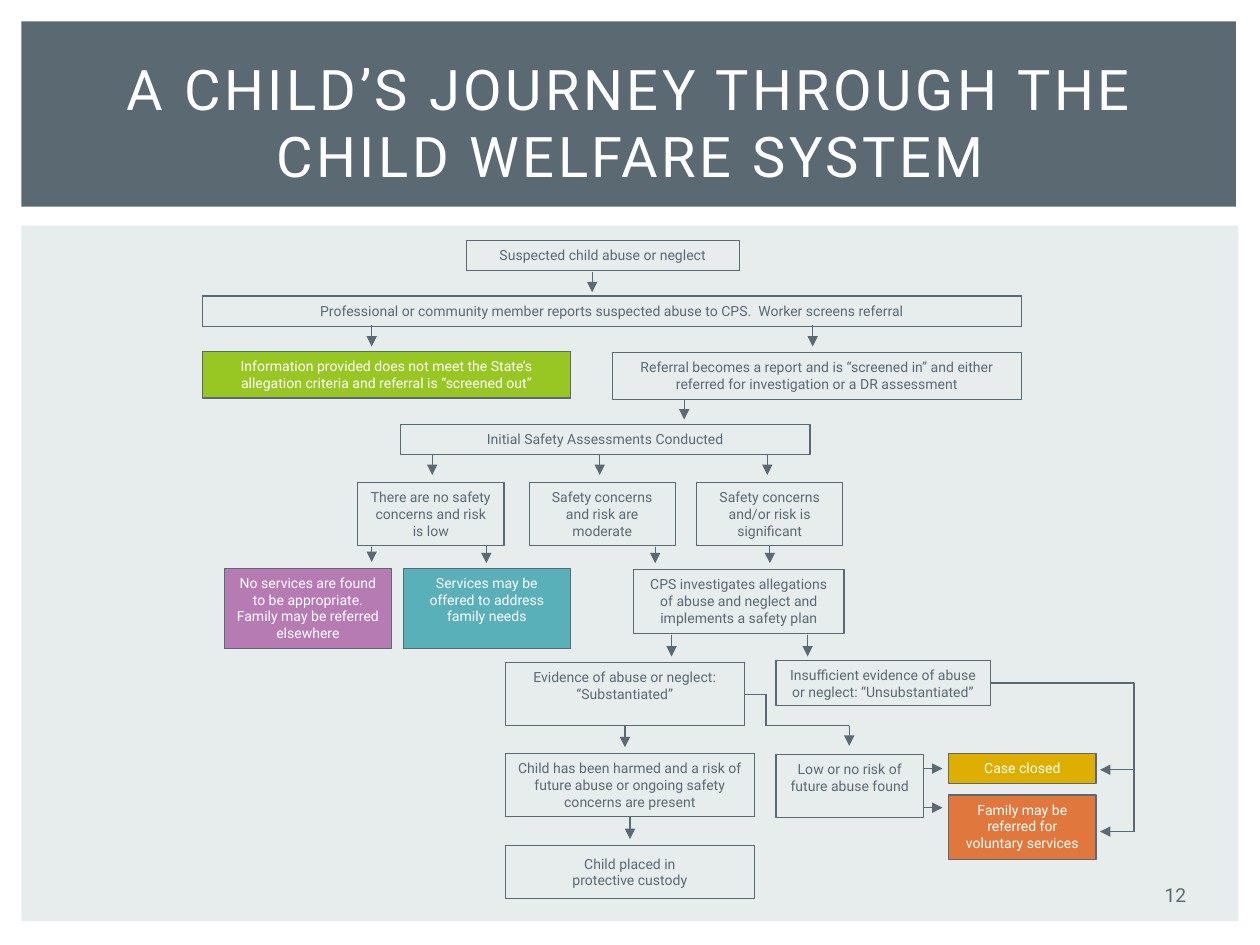
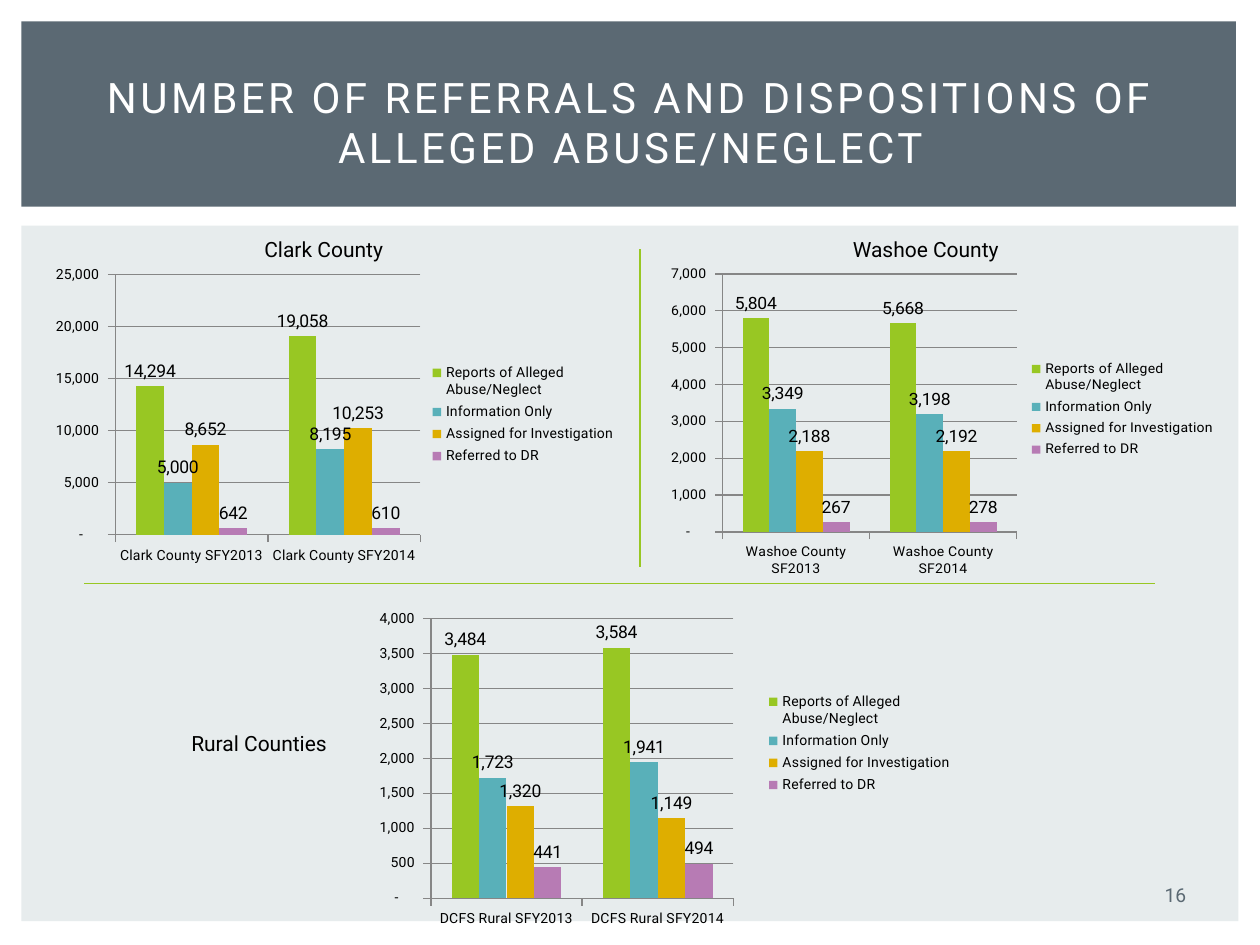
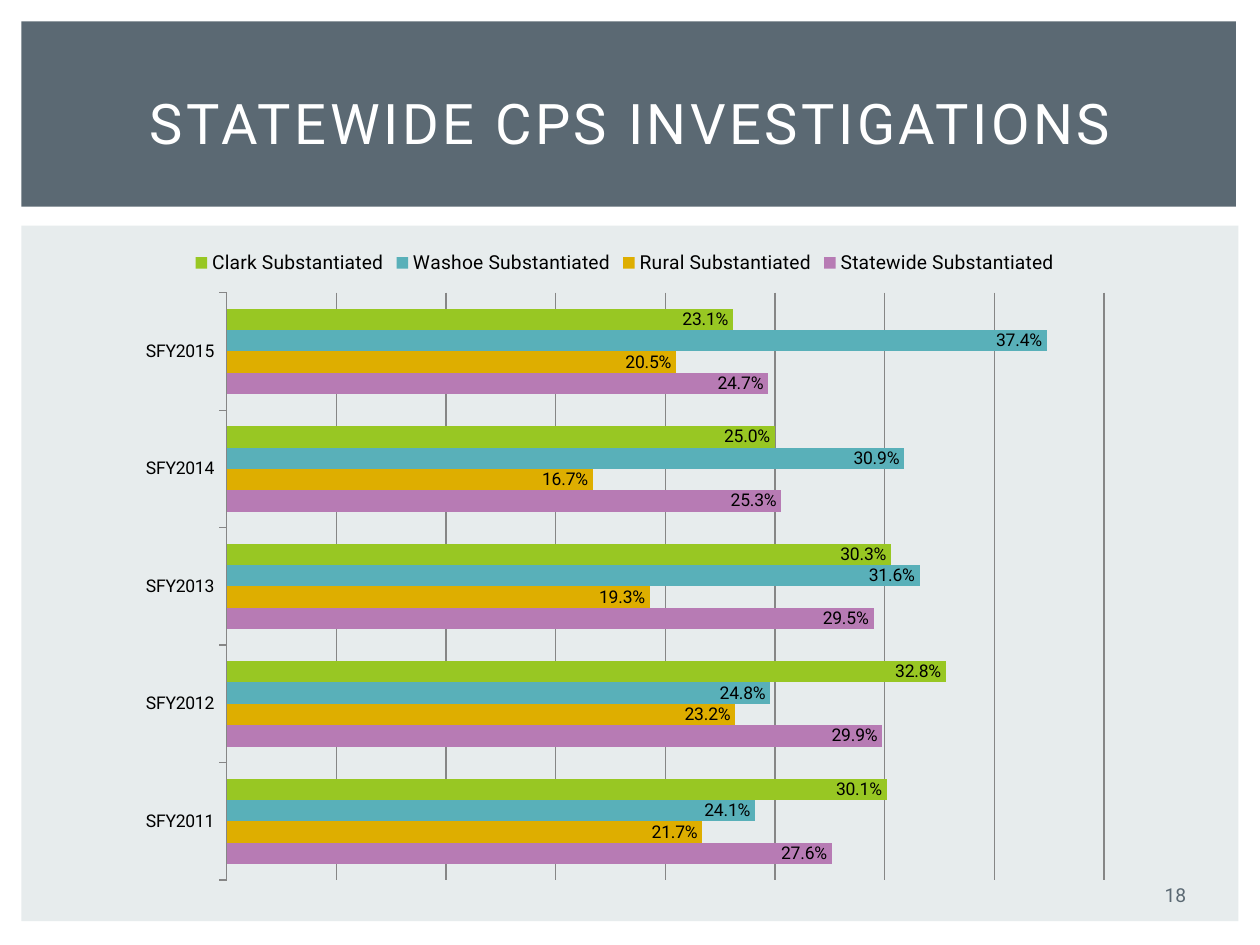
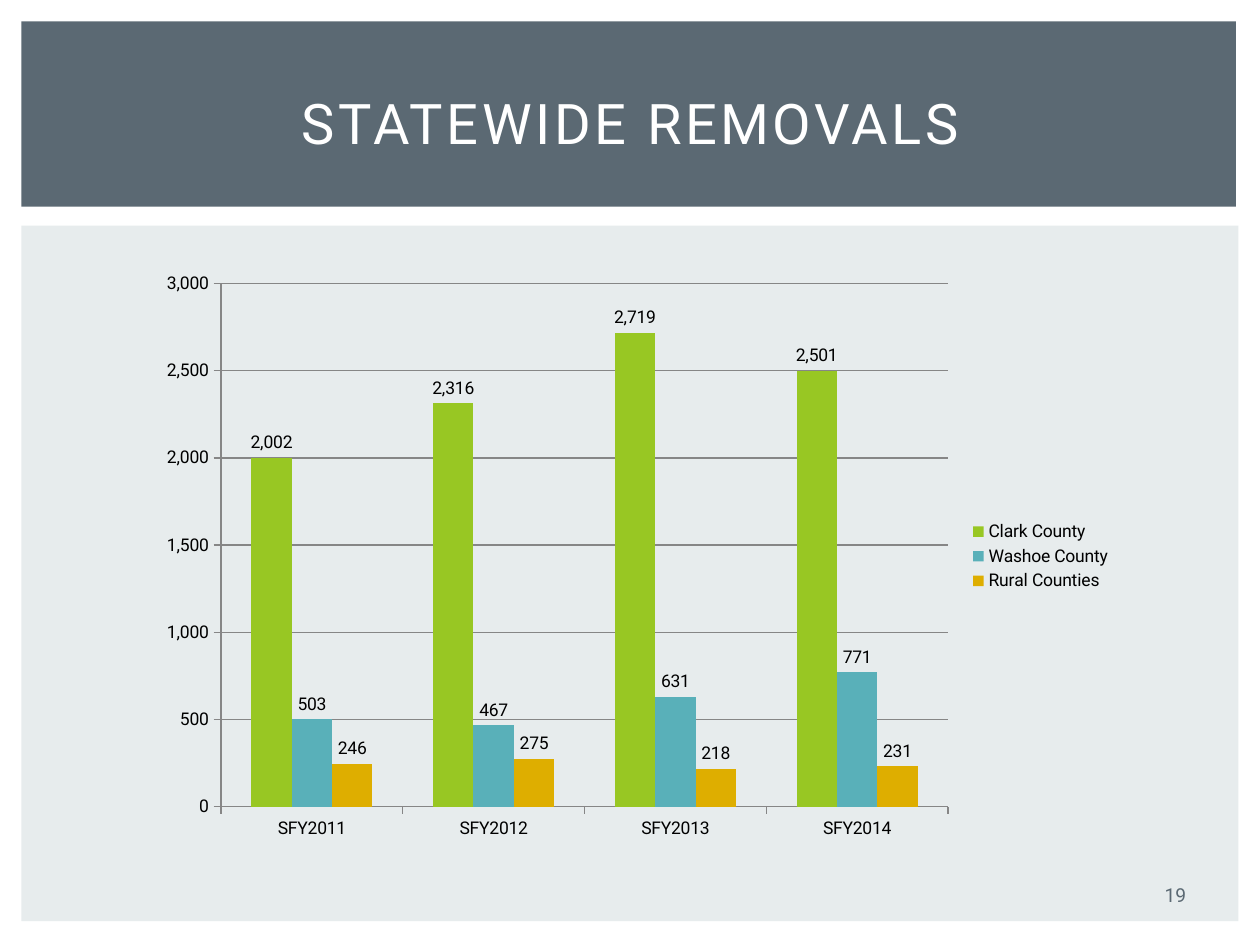
"""Build four slides on child welfare referrals, investigations and removals."""
from lxml.etree import SubElement as Sub
from pptx import Presentation
from pptx.chart.data import CategoryChartData as Data
from pptx.dml.color import RGBColor
from pptx.enum.chart import XL_CHART_TYPE as Kind
from pptx.enum.chart import XL_LABEL_POSITION as Spot
from pptx.enum.chart import XL_LEGEND_POSITION as Side
from pptx.enum.chart import XL_TICK_MARK as Tick
from pptx.enum.shapes import MSO_CONNECTOR as Link
from pptx.enum.shapes import MSO_SHAPE as Form
from pptx.enum.text import MSO_ANCHOR as Anchor
from pptx.enum.text import PP_ALIGN as Align
from pptx.oxml.ns import qn
from pptx.util import Emu, Pt

SCALE = 9144
FONT = "Roboto"
SLATE, PALE, WHITE, BLACK, GRAY = "5B6973", "E7ECED", "FFFFFF", "000000", "868686"
GREEN, TEAL, GOLD, PLUM, RUST = "98C723", "59B0B9", "DEAE00", "B77BB4", "E0773C"
COMMA = '_(* #,##0_);_(* \\(#,##0\\);_(* "-"??_);_('


def px(n):
    return Emu(n * SCALE)


def tint(code):
    return RGBColor.from_string(code)


class Deck:
    """Hold the shared style and the current slide."""

    def __init__(self):
        self.prs = Presentation()
        self.prs.slide_width, self.prs.slide_height = px(1000), px(750)
        self.slide = None

    def page(self, title, num, size=32):
        self.slide = self.prs.slides.add_slide(self.prs.slide_layouts[6])
        self.rect((17, 179, 966, 552), PALE)
        self.rect((17, 17, 964, 147), SLATE)
        self.label((901, 695, 64, 30), str(num), 11, SLATE, Align.CENTER, Anchor.MIDDLE)
        self.label((42, 39, 917, 115), title, size, WHITE, Align.CENTER, Anchor.MIDDLE, 200)

    def fill_text(self, frame, text, size, color, align, anchor, gap=0):
        frame.word_wrap = True
        frame.vertical_anchor = anchor
        for i, line in enumerate(text.split("\n")):
            para = frame.add_paragraph() if i else frame.paragraphs[0]
            para.alignment = align
            run = para.add_run()
            run.text = line
            run.font.name, run.font.size = FONT, Pt(size)
            run.font.color.rgb = tint(color)
            if gap:
                run._r.get_or_add_rPr().set("spc", str(gap))

    def label(self, area, text, size, color, align=Align.LEFT, anchor=Anchor.TOP, gap=0):
        box = self.slide.shapes.add_textbox(*map(px, area))
        self.fill_text(box.text_frame, text, size, color, align, anchor, gap)

    def rect(self, area, fill=None, edge=None):
        shape = self.slide.shapes.add_shape(Form.RECTANGLE, *map(px, area))
        shape.shadow.inherit = False
        if fill:
            shape.fill.solid()
            shape.fill.fore_color.rgb = tint(fill)
        else:
            shape.fill.background()
        if edge:
            shape.line.color.rgb = tint(edge)
            shape.line.width = Pt(0.75)
        else:
            shape.line.fill.background()
        return shape

    def step(self, area, text, fill=None, anchor=Anchor.TOP):
        shape = self.rect(area, fill, SLATE)
        color = WHITE if fill else SLATE
        self.fill_text(shape.text_frame, text, 8, color, Align.CENTER, anchor)
        return shape

    def line(self, x1, y1, x2, y2, tip=False, color=SLATE, start=None, site=0):
        wire = self.slide.shapes.add_connector(Link.STRAIGHT, *map(px, (x1, y1, x2, y2)))
        wire.line.color.rgb = tint(color)
        wire.line.width = Pt(0.75)
        props = wire._element.spPr
        if tip:
            Sub(props.find(qn("a:ln")), qn("a:tailEnd"), type="triangle")
        Sub(props, qn("a:effectLst"))
        if start is not None:
            wire.begin_connect(start, site)

    def chart(self, area, cats, series, fmt, kind=Kind.COLUMN_CLUSTERED,
              spot=Spot.OUTSIDE_END, side=Side.RIGHT, small=10, key=10, plot=None):
        data = Data(number_format=fmt)
        data.categories = cats
        for name, _, vals in series:
            data.add_series(name, vals)
        chart = self.slide.shapes.add_chart(kind, *map(px, area), data).chart
        chart.has_title = False
        chart.font.name, chart.font.size = FONT, Pt(10)
        chart.font.color.rgb = tint(BLACK)
        chart.has_legend = True
        chart.legend.position = side
        chart.legend.include_in_layout = False
        chart.legend.font.size = Pt(key)
        for axis in (chart.category_axis, chart.value_axis):
            axis.major_tick_mark, axis.minor_tick_mark = Tick.OUTSIDE, Tick.NONE
            axis.tick_labels.font.size = Pt(small)
            axis.format.line.color.rgb = tint(GRAY)
        axis = chart.value_axis
        axis.minimum_scale = 0
        axis.has_major_gridlines = True
        axis.major_gridlines.format.line.color.rgb = tint(GRAY)
        axis.tick_labels.number_format = fmt
        axis.tick_labels.number_format_is_linked = False
        body = chart.plots[0]
        body.gap_width, body.overlap, body.vary_by_categories = 150, 0, False
        for item, (_, color, _) in zip(body.series, series):
            item.format.fill.solid()
            item.format.fill.fore_color.rgb = tint(color)
            tags = item.data_labels
            tags.show_value, tags.position = True, spot
            tags.number_format, tags.number_format_is_linked = fmt, False
            tags.font.size = Pt(10)
        if plot:
            self.place(chart, plot)
        return chart

    def place(self, chart, plot):
        zone = chart._chartSpace.chart.plotArea
        for old in zone.findall(qn("c:layout")):
            zone.remove(old)
        frame = zone.makeelement(qn("c:layout"))
        zone.insert(0, frame)
        node = Sub(frame, qn("c:manualLayout"))
        parts = [("layoutTarget", "inner"), ("xMode", "edge"), ("yMode", "edge")]
        for tag, val in parts + list(zip("xywh", plot)):
            Sub(node, qn("c:" + tag), val=str(val))


def journey(deck):
    deck.page("A CHILD’S JOURNEY THROUGH THE CHILD WELFARE SYSTEM", 12)
    deck.step((370, 191, 217, 24), "Suspected child abuse or neglect")
    deck.step((161, 235, 650, 24), "Professional or community member reports suspected "
              "abuse to CPS.  Worker screens referral")
    deck.step((486, 280, 325, 37), "Referral becomes a report and is “screened in” and "
              "either referred for investigation or a DR assessment")
    deck.step((161, 279, 292, 37), "Information provided does not meet the State’s "
              "allegation criteria and referral is “screened out”", GREEN)
    deck.step((318, 337, 325, 24), "Initial Safety Assessments Conducted")
    risks = [(284, "There are no safety concerns and risk is low"),
             (420, "Safety concerns and risk are moderate"),
             (553, "Safety concerns and/or risk is significant")]
    for x, text in risks:
        risk = deck.step((x, 383, 116, 50), text)
    deck.step((503, 452, 167, 51), "CPS investigates allegations of abuse and neglect and "
              "implements a safety plan")
    deck.step((178, 451, 133, 64), "No services are found to be appropriate. Family may be "
              "referred elsewhere", PLUM)
    deck.step((320, 451, 133, 64), "Services may be offered to address family needs", TEAL)
    weak = deck.step((616, 524, 170, 36),
                     "Insufficient evidence of abuse or neglect: “Unsubstantiated”")
    proof = deck.step((401, 526, 190, 50), "Evidence of abuse or neglect:\n“Substantiated”")
    harm = deck.step((401, 598, 198, 50), "Child has been harmed and a risk of future abuse "
                     "or ongoing safety concerns are present")
    deck.step((401, 671, 198, 42), "Child placed in\nprotective custody", None, Anchor.MIDDLE)
    deck.step((616, 599, 117, 50), "Low or no risk of future abuse found")
    deck.step((753, 598, 117, 24), "Case closed", GOLD)
    deck.step((753, 631, 117, 51), "Family may be referred for voluntary services", RUST)

    drops = [(470, 216, 232), (295, 258, 275), (645, 258, 275), (543, 317, 333),
             (343, 361, 377), (476, 361, 377), (609, 361, 377), (295, 434, 446),
             (386, 433, 447), (520, 434, 447), (533, 504, 521), (641, 504, 521),
             (674, 576, 592)]
    for x, top, end in drops:
        deck.line(x, top, x, end, True)
    for x, top, end, box in [(611, 433, 447, risk), (496, 576, 593, proof),
                             (500, 648, 666, harm)]:
        deck.line(x, top, x, end, True, start=box, site=2)
    deck.line(591, 551, 608, 551, start=proof, site=3)
    deck.line(608, 551, 608, 576)
    deck.line(608, 576, 674, 576)
    deck.line(786, 542, 900, 542, start=weak, site=3)
    deck.line(900, 542, 900, 660)
    for x1, x2, y in [(733, 748, 610), (733, 748, 641), (900, 873, 660), (900, 873, 611)]:
        deck.line(x1, y, x2, y, True)


def counts(deck):
    deck.page("NUMBER OF REFERRALS AND DISPOSITIONS OF ALLEGED ABUSE/NEGLECT", 16, 24)
    names = ["Reports of Alleged Abuse/Neglect", "Information Only",
             "Assigned for Investigation", "Referred to DR"]
    hues = [GREEN, TEAL, GOLD, PLUM]
    charts = [
        ((508, 200, 467, 258), ["Washoe County SF2013", "Washoe County SF2014"],
         [(5804, 5668), (3349, 3198), (2188, 2192), (267, 278)], (0.14, 0.07, 0.5, 0.82)),
        ((267, 440, 500, 300), ["DCFS Rural SFY2013", "DCFS Rural SFY2014"],
         [(3484, 3584), (1723, 1941), (1320, 1149), (441, 494)], (0.15, 0.17, 0.48, 0.74)),
        ((25, 200, 475, 258), ["Clark County SFY2013", "Clark County SFY2014"],
         [(14294, 19058), (5000, 8195), (8652, 10253), (642, 610)], (0.14, 0.07, 0.51, 0.8)),
    ]
    for area, cats, vals, plot in charts:
        deck.chart(area, cats, list(zip(names, hues, vals)), COMMA, small=8, key=8, plot=plot)
    for x, y, text in [(200, 183, "Clark County"), (667, 183, "Washoe County"),
                       (142, 575, "Rural Counties")]:
        deck.label((x, y, 250, 30), text, 12, BLACK)
    deck.line(508, 198, 508, 450, color=GREEN)
    deck.line(67, 463, 917, 463, color=GREEN)


def rates(deck):
    deck.page("STATEWIDE CPS INVESTIGATIONS", 18)
    series = [
        ("Statewide Substantiated", PLUM, (0.276, 0.299, 0.295, 0.253, 0.247)),
        ("Rural Substantiated", GOLD, (0.217, 0.232, 0.193, 0.167, 0.205)),
        ("Washoe Substantiated", TEAL, (0.241, 0.248, 0.316, 0.309, 0.374)),
        ("Clark Substantiated", GREEN, (0.301, 0.328, 0.303, 0.25, 0.231)),
    ]
    years = [f"SFY{year}" for year in range(2011, 2016)]
    chart = deck.chart((100, 188, 792, 521), years, series, "0.0%", Kind.BAR_CLUSTERED,
                       Spot.INSIDE_END, Side.TOP, key=11)
    axis = chart.value_axis
    axis.maximum_scale, axis.major_unit, axis.visible = 0.4, 0.05, False


def moves(deck):
    deck.page("STATEWIDE REMOVALS", 19)
    series = [
        ("Clark County", GREEN, (2002, 2316, 2719, 2501)),
        ("Washoe County", TEAL, (503, 467, 631, 771)),
        ("Rural Counties", GOLD, (246, 275, 218, 231)),
    ]
    years = [f"SFY{year}" for year in range(2011, 2015)]
    deck.chart((117, 208, 775, 467), years, series, "#,##0")


def main():
    deck = Deck()
    for build in (journey, counts, rates, moves):
        build(deck)
    deck.prs.save("out.pptx")


if __name__ == "__main__":
    main()
